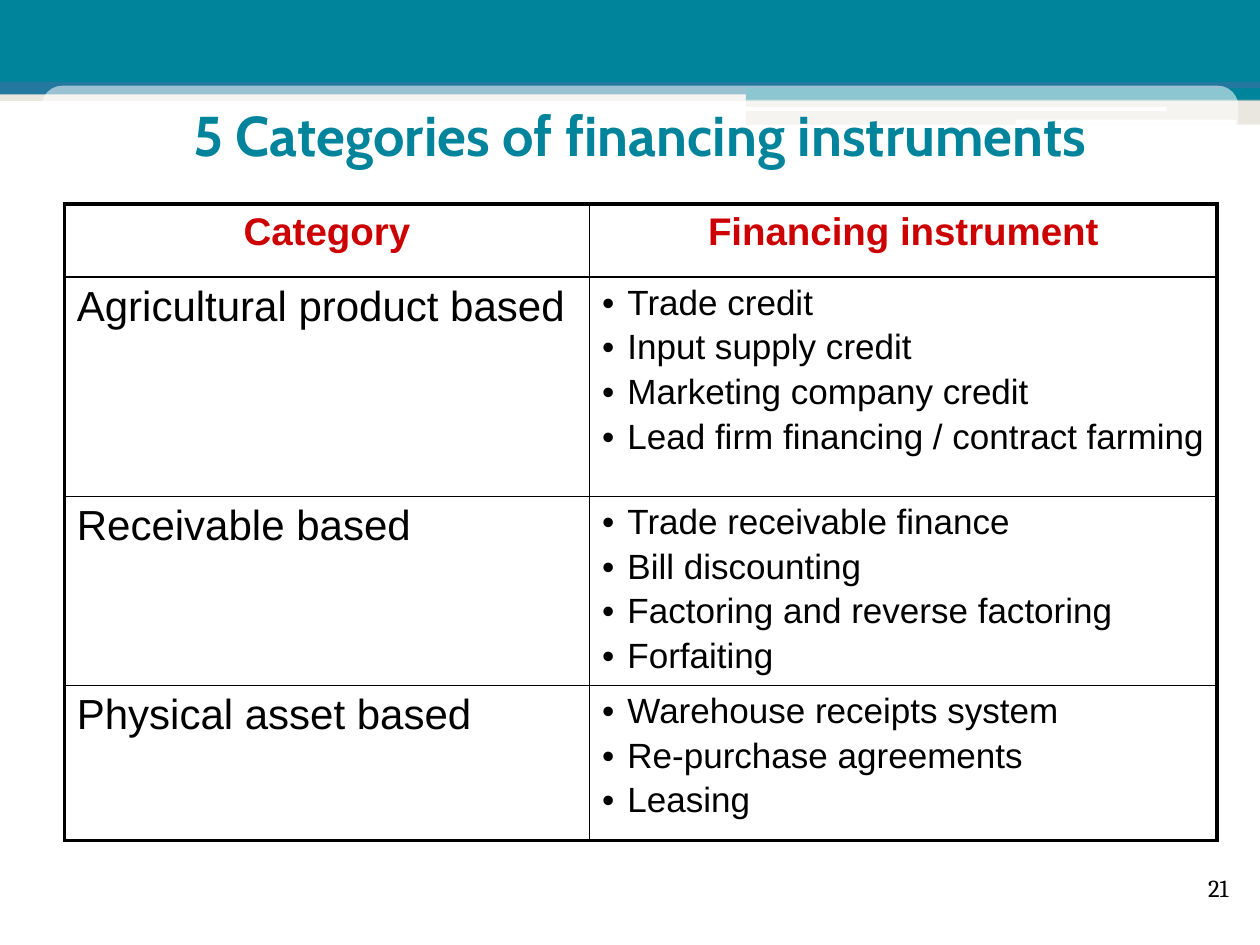
from lxml.etree import SubElement
from pptx import Presentation
from pptx.dml.color import RGBColor
from pptx.enum.shapes import MSO_SHAPE
from pptx.enum.text import MSO_ANCHOR, PP_ALIGN
from pptx.oxml import parse_xml
from pptx.oxml.ns import nsdecls, qn
from pptx.util import Inches, Pt

TEAL, BLUE, SAND, WHITE, BLACK, RED = "00849B", "22789E", "D4D0C1", "FFFFFF", "000000", "CC0000"

TITLE_FORMAT = {"name": "Cabin", "size": Pt(32), "bold": True}
NUMBER_FORMAT = {"name": "Cambria", "size": Pt(14)}
HEADING_FORMAT = {"name": "Arial", "size": Pt(22), "bold": True}
CATEGORY_FORMAT = {"name": "Arial", "size": Pt(24), "bold": False}
INSTRUMENT_FORMAT = {"name": "Arial", "size": Pt(20), "bold": False}

HEADINGS = ["Category", "Financing instrument"]
CATEGORIES = {
    "Agricultural product based": [
        "Trade credit",
        "Input supply credit",
        "Marketing company credit",
        "Lead firm financing / contract farming",
    ],
    "Receivable based": [
        "Trade receivable finance",
        "Bill discounting",
        "Factoring and reverse factoring",
        "Forfaiting",
    ],
    "Physical asset based": [
        "Warehouse receipts system",
        "Re-purchase agreements",
        "Leasing",
    ],
}
COLUMN_WIDTHS = [4.17, 4.98]
ROW_HEIGHTS = [0.58, 1.74, 1.5, 1.23]


def rgb(value):
    """Turn a hex string into a colour."""
    return RGBColor.from_string(value)


def write(paragraph, text, formats, color):
    """Add a formatted run to a paragraph."""
    run = paragraph.add_run()
    run.text = text
    for key, value in formats.items():
        setattr(run.font, key, value)
    run.font.color.rgb = rgb(color)


def add_panel(slide, box, color, opacity=100, corner=None):
    """Draw a borderless panel, rounded when a corner ratio is given."""
    kind = MSO_SHAPE.RECTANGLE if corner is None else MSO_SHAPE.ROUNDED_RECTANGLE
    panel = slide.shapes.add_shape(kind, *map(Inches, box))
    panel.shadow.inherit = False
    panel.fill.solid()
    panel.fill.fore_color.rgb = rgb(color)
    panel.line.fill.background()
    if corner is not None:
        panel.adjustments[0] = corner
    if opacity < 100:
        fill_color = panel.fill._xPr.find(".//" + qn("a:srgbClr"))
        SubElement(fill_color, qn("a:alpha"), val=str(opacity * 1000))
    return panel


def add_banner(slide, box):
    """Layer the coloured bands across the top of the slide."""
    left, top, width, _ = box
    split = left + 5.92
    right_width = width - 5.92
    add_panel(slide, (left, top + 0.71, width, 0.09), SAND, 50)
    add_panel(slide, (left, top, width, 0.65), TEAL)
    add_panel(slide, (left, top + 0.65, width, 0.1), BLUE)
    add_panel(slide, (split, top + 0.7, right_width, 0.1), TEAL)
    add_panel(slide, (split, top + 0.79, right_width, 0.2), SAND, 50)
    add_panel(slide, (split - 0.01, top + 0.85, 3.35, 0.03), WHITE, corner=0.17)
    add_panel(slide, (left + 8.06, top + 0.95, 1.75, 0.04), WHITE, corner=0.17)


def add_title(slide, box, text):
    """Place the title on a translucent rounded panel."""
    frame = add_panel(slide, box, WHITE, 55, 0.22).text_frame
    frame.word_wrap = True
    frame.vertical_anchor = MSO_ANCHOR.BOTTOM
    frame.paragraphs[0].alignment = PP_ALIGN.CENTER
    write(frame.paragraphs[0], text, TITLE_FORMAT, TEAL)


def add_bullet(paragraph):
    """Give a paragraph a hanging round bullet."""
    properties = paragraph._p.get_or_add_pPr()
    properties.set("marL", str(Inches(0.2)))
    properties.set("indent", str(-Inches(0.2)))
    SubElement(properties, qn("a:buFont"), typeface="Arial")
    SubElement(properties, qn("a:buChar"), char="•")


def fill_instruments(cell, instruments):
    """List the instruments of one category in a cell."""
    frame = cell.text_frame
    for index, instrument in enumerate(instruments):
        paragraph = frame.add_paragraph() if index else frame.paragraphs[0]
        add_bullet(paragraph)
        if index:
            paragraph.space_before = Pt(3.3)
        write(paragraph, instrument, INSTRUMENT_FORMAT, BLACK)


def set_borders(cell, outer_sides):
    """Rule a cell, thicker on the sides at the table's edge."""
    properties = cell._tc.get_or_add_tcPr()
    for position, side in enumerate("LRTB"):
        weight = Pt(2.25 if side in outer_sides else 1)
        properties.insert(position, parse_xml(
            f'<a:ln{side} {nsdecls("a")} w="{weight}"><a:solidFill>'
            f'<a:srgbClr val="{BLACK}"/></a:solidFill></a:ln{side}>'
        ))


def add_instrument_table(slide, box):
    """Build the table of categories and their instruments."""
    row_count, column_count = len(ROW_HEIGHTS), len(COLUMN_WIDTHS)
    table = slide.shapes.add_table(row_count, column_count, *map(Inches, box)).table
    table.first_row = table.horz_banding = False
    for column, width in zip(table.columns, COLUMN_WIDTHS):
        column.width = Inches(width)
    for row, height in zip(table.rows, ROW_HEIGHTS):
        row.height = Inches(height)
    for row in range(row_count):
        for column in range(column_count):
            cell = table.cell(row, column)
            cell.fill.background()
            edges = {"L": column == 0, "R": column == column_count - 1,
                     "T": row == 0, "B": row == row_count - 1}
            set_borders(cell, [side for side, outer in edges.items() if outer])
    for column, heading in enumerate(HEADINGS):
        paragraph = table.cell(0, column).text_frame.paragraphs[0]
        paragraph.alignment = PP_ALIGN.CENTER
        write(paragraph, heading, HEADING_FORMAT, RED)
    for row, (category, instruments) in enumerate(CATEGORIES.items(), 1):
        paragraph = table.cell(row, 0).text_frame.paragraphs[0]
        write(paragraph, category, CATEGORY_FORMAT, BLACK)
        fill_instruments(table.cell(row, 1), instruments)


def add_page_number(slide, box, number):
    """Write the page number in the corner."""
    frame = slide.shapes.add_textbox(*map(Inches, box)).text_frame
    frame.word_wrap = True
    write(frame.paragraphs[0], number, NUMBER_FORMAT, BLACK)


def main():
    """Build and save the slide."""
    presentation = Presentation()
    presentation.slide_width, presentation.slide_height = Inches(10), Inches(7.5)
    slide = presentation.slides.add_slide(presentation.slide_layouts[6])
    add_banner(slide, (0, 0, 10, 0.99))
    add_instrument_table(slide, (0.51, 1.62, sum(COLUMN_WIDTHS), sum(ROW_HEIGHTS)))
    add_title(slide, (0.33, 0.68, 9.5, 0.75), "5 Categories of financing instruments")
    add_page_number(slide, (9.49, 6.88, 0.51, 0.4), "21")
    presentation.save("out.pptx")


if __name__ == "__main__":
    main()
